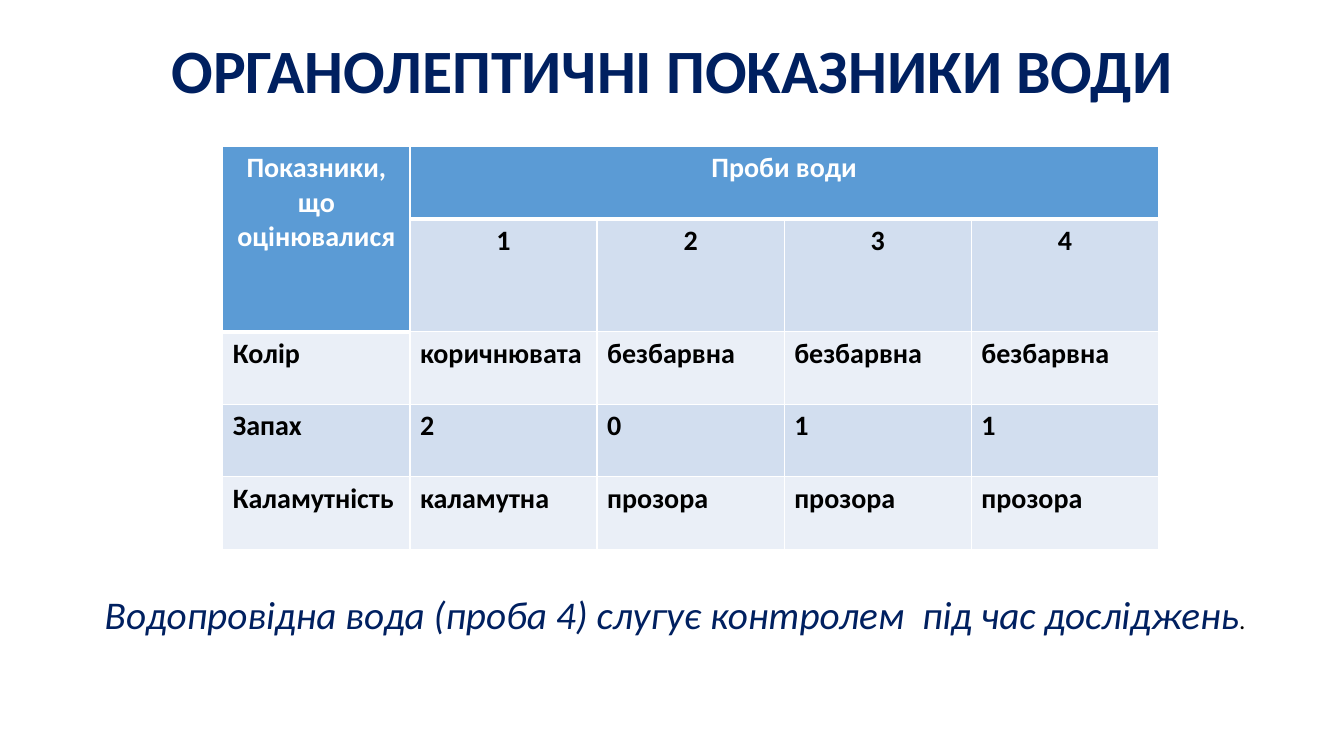
from dataclasses import dataclass

from lxml import etree
from pptx import Presentation
from pptx.dml import color
from pptx.enum import text
from pptx.oxml import ns
from pptx.util import Inches, Pt

COLORS = {
    "navy": "002060",
    "header": "5B9BD5",
    "band": "D2DEEF",
    "light": "EAEFF7",
    "white": "FFFFFF",
    "black": "000000",
}


@dataclass(frozen=True)
class Style:
    """Font of a run."""

    size: int
    ink: str
    bold: bool = False
    italic: bool = False


@dataclass(frozen=True)
class Row:
    """One table row; empty strings belong to merged cells."""

    values: tuple[str, ...]
    fill: str
    ink: str = "black"
    centred: bool = False


ROWS = (
    Row(("Показники, що оцінювалися", "Проби води", "", "", ""), "header", "white", True),
    Row(("", "1", "2", "3", "4"), "band", centred=True),
    Row(("Колір", "коричнювата", "безбарвна", "безбарвна", "безбарвна"), "light"),
    Row(("Запах", "2", "0", "1", "1"), "band"),
    Row(("Каламутність", "каламутна", "прозора", "прозора", "прозора"), "light"),
)


def rgb(key: str) -> color.RGBColor:
    """Return a named colour."""
    return color.RGBColor.from_string(COLORS[key])


def add_run(paragraph, words: str, style: Style) -> None:
    """Append a formatted run."""
    run = paragraph.add_run()
    run.text = words
    formats = {"name": "Calibri", "size": Pt(style.size), "bold": style.bold, "italic": style.italic}
    for attribute, value in formats.items():
        setattr(run.font, attribute, value)
    run.font.color.rgb = rgb(style.ink)


def add_borders(cell, bottom: int) -> None:
    """Draw white borders with the given bottom width in points."""
    properties = cell._tc.get_or_add_tcPr()
    for side, width in {"lnL": 1, "lnR": 1, "lnT": 1, "lnB": bottom}.items():
        line = etree.SubElement(properties, ns.qn(f"a:{side}"), w=str(Pt(width)))
        fill = etree.SubElement(line, ns.qn("a:solidFill"))
        etree.SubElement(fill, ns.qn("a:srgbClr"), val=COLORS["white"])


def add_title(slide) -> None:
    """Fill and place the title."""
    title = slide.shapes.title
    place = {"left": 1.6, "top": 0, "width": 11.5, "height": 1.45}
    for attribute, value in place.items():
        setattr(title, attribute, Inches(value))
    frame = title.text_frame
    frame.auto_size = text.MSO_AUTO_SIZE.NONE
    frame.vertical_anchor = text.MSO_ANCHOR.MIDDLE
    heading = frame.paragraphs[0]
    heading.alignment = text.PP_ALIGN.LEFT
    heading.line_spacing = 0.9
    add_run(heading, "ОРГАНОЛЕПТИЧНІ ПОКАЗНИКИ ВОДИ", Style(44, "navy", bold=True))


def add_indicators(slide) -> None:
    """Add the table of water indicators."""
    frame = slide.shapes.add_table(
        len(ROWS), len(ROWS[0].values), Inches(2.21), Inches(1.45), Inches(9.28), Inches(3.6)
    )
    indicators = frame.table
    for row_index, row in enumerate(ROWS):
        for column_index, value in enumerate(row.values):
            cell = indicators.cell(row_index, column_index)
            in_header = row_index == 0 or (row_index == 1 and column_index == 0)
            add_borders(cell, 3 if in_header else 1)
            cell.fill.solid()
            cell.fill.fore_color.rgb = rgb("header" if in_header else row.fill)
            if value:
                paragraph = cell.text_frame.paragraphs[0]
                paragraph.alignment = text.PP_ALIGN.CENTER if row.centred else text.PP_ALIGN.LEFT
                add_run(paragraph, value, Style(20, row.ink, bold=True))
    indicators.cell(0, 0).merge(indicators.cell(1, 0))
    indicators.cell(0, 1).merge(indicators.cell(0, 4))


def add_control_note(slide) -> None:
    """Add the remark about the control sample."""
    note = slide.shapes.add_textbox(Inches(0.94), Inches(5.81), Inches(11.81), Inches(0.57))
    note.text_frame.word_wrap = True
    note.text_frame.auto_size = text.MSO_AUTO_SIZE.SHAPE_TO_FIT_TEXT
    remark = note.text_frame.paragraphs[0]
    add_run(
        remark,
        "Водопровідна вода (проба 4) слугує контролем  під час досліджень",
        Style(28, "navy", italic=True),
    )
    add_run(remark, ".", Style(18, "black"))


def main() -> None:
    """Build and save the slide."""
    deck = Presentation()
    deck.slide_width, deck.slide_height = Inches(13.33), Inches(7.5)
    slide = deck.slides.add_slide(deck.slide_layouts[5])
    add_title(slide)
    add_indicators(slide)
    add_control_note(slide)
    deck.save("out.pptx")


if __name__ == "__main__":
    main()
